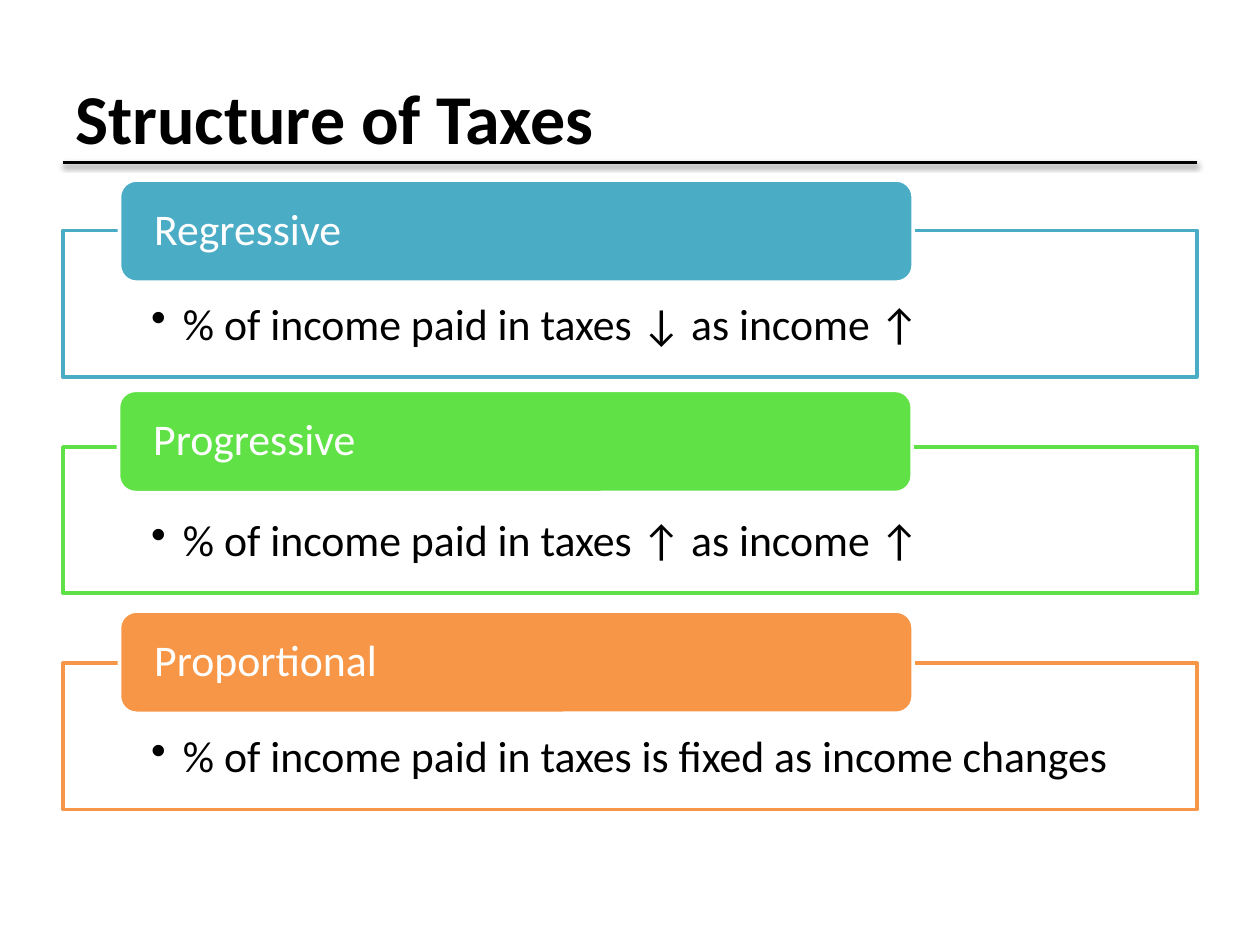
from dataclasses import dataclass

import lxml.etree
import pptx
import pptx.dml.color
import pptx.enum.shapes
import pptx.enum.text
import pptx.oxml
import pptx.oxml.ns
import pptx.util
from pptx.util import Cm

RGB = pptx.dml.color.RGBColor
SHAPES = pptx.enum.shapes.MSO_SHAPE
ANCHOR = pptx.enum.text.MSO_ANCHOR
ALIGN = pptx.enum.text.PP_ALIGN
qn = pptx.oxml.ns.qn


@dataclass(frozen=True)
class Theme:
    font: str = "Calibri"
    black: RGB = RGB(0, 0, 0)
    white: RGB = RGB(255, 255, 255)
    blue: RGB = RGB.from_string("4BACC6")
    green: RGB = RGB.from_string("60E146")
    orange: RGB = RGB.from_string("F79646")
    title_size: int = 40
    body_size: int = 25
    line_width: int = 2


@dataclass(frozen=True)
class TaxType:
    name: str
    effect: str
    color: RGB
    label_left: float
    label_top: float


THEME = Theme()
TAX_TYPES = (
    TaxType("Regressive", "% of income paid in taxes ↓ as income ↑", THEME.blue, 2.41, 3.63),
    TaxType("Progressive", "% of income paid in taxes ↑ as income ↑", THEME.green, 2.39, 7.87),
    TaxType("Proportional", "% of income paid in taxes is fixed as income changes",
            THEME.orange, 2.41, 12.32),
)
MARGIN, CONTENT_WIDTH = 1.27, 22.86
PANEL_TOP, PANEL_HEIGHT, PANEL_PITCH = 4.65, 2.95, 4.36
LABEL_WIDTH, LABEL_HEIGHT = 16, 2.06
RULE_TOP = 3.28


def write_text(shape, text: str, size: int, color: RGB, anchor, insets, bold: bool = False):
    """Fill a shape with one left-aligned paragraph; insets are left, top, right, bottom in cm."""
    frame = shape.text_frame
    frame.word_wrap = True
    frame.vertical_anchor = anchor
    frame.margin_left, frame.margin_top, frame.margin_right, frame.margin_bottom = map(Cm, insets)
    frame.text = text
    paragraph = frame.paragraphs[0]
    paragraph.alignment = ALIGN.LEFT
    font = paragraph.runs[0].font
    font.name, font.size, font.bold = THEME.font, pptx.util.Pt(size), bold
    font.color.rgb = color
    return paragraph


def add_box(slide, kind, left: float, top: float, width: float, height: float,
            fill: RGB, line: RGB):
    shape = slide.shapes.add_shape(kind, Cm(left), Cm(top), Cm(width), Cm(height))
    shape.shadow.inherit = False
    shape.fill.solid()
    shape.fill.fore_color.rgb = fill
    shape.line.color.rgb = line
    shape.line.width = pptx.util.Pt(THEME.line_width)
    return shape


def add_title(slide, text: str) -> None:
    box = slide.shapes.add_textbox(Cm(MARGIN), Cm(0.76), Cm(CONTENT_WIDTH), Cm(3.18))
    write_text(box, text, THEME.title_size, THEME.black, ANCHOR.MIDDLE,
               (0.25, 0.13, 0.25, 0.13), bold=True)


def add_title_rule(slide) -> None:
    rule = slide.shapes.add_connector(
        pptx.enum.shapes.MSO_CONNECTOR.STRAIGHT,
        Cm(MARGIN), Cm(RULE_TOP), Cm(MARGIN + CONTENT_WIDTH), Cm(RULE_TOP))
    rule.line.color.rgb = THEME.black
    rule.line.width = pptx.util.Pt(THEME.line_width)
    effects = lxml.etree.SubElement(rule._element.spPr, qn("a:effectLst"))
    shadow = lxml.etree.SubElement(effects, qn("a:outerShdw"), blurRad="40000", dist="20000",
                                   dir="5400000", rotWithShape="0")
    color = lxml.etree.SubElement(shadow, qn("a:srgbClr"), val=str(THEME.black))
    lxml.etree.SubElement(color, qn("a:alpha"), val="38000")


def add_bullet(paragraph) -> None:
    properties = paragraph._p.get_or_add_pPr()
    properties.set("marL", str(Cm(0.64)))
    properties.set("indent", str(Cm(-0.64)))
    lxml.etree.SubElement(properties, qn("a:buChar"), char="•")


def add_tax_type(slide, tax: TaxType, panel_top: float) -> None:
    """Draw the outlined panel with its bullet, then the label over its top edge."""
    panel = add_box(slide, SHAPES.RECTANGLE, MARGIN, panel_top, CONTENT_WIDTH, PANEL_HEIGHT,
                    THEME.white, tax.color)
    fill_color = panel._element.spPr.find(qn("a:solidFill")).find(qn("a:srgbClr"))
    lxml.etree.SubElement(fill_color, qn("a:alpha"), val="90000")
    effect = write_text(panel, tax.effect, THEME.body_size, THEME.black, ANCHOR.TOP,
                        (1.78, 1.45, 1.78, 0.48))
    effect.line_spacing = 0.9
    add_bullet(effect)

    label = add_box(slide, SHAPES.ROUNDED_RECTANGLE, tax.label_left, tax.label_top,
                    LABEL_WIDTH, LABEL_HEIGHT, tax.color, THEME.white)
    name = write_text(label, tax.name, THEME.body_size, THEME.white, ANCHOR.MIDDLE,
                      (0.6, 0, 0.6, 0))
    name.line_spacing = 0.9


def main() -> None:
    presentation = pptx.Presentation()
    presentation.slide_width, presentation.slide_height = Cm(25.4), Cm(19.05)
    slide = presentation.slides.add_slide(presentation.slide_layouts[6])
    add_title_rule(slide)
    add_title(slide, "Structure of Taxes")
    for index, tax in enumerate(TAX_TYPES):
        add_tax_type(slide, tax, PANEL_TOP + index * PANEL_PITCH)
    presentation.save("out.pptx")


if __name__ == "__main__":
    main()
